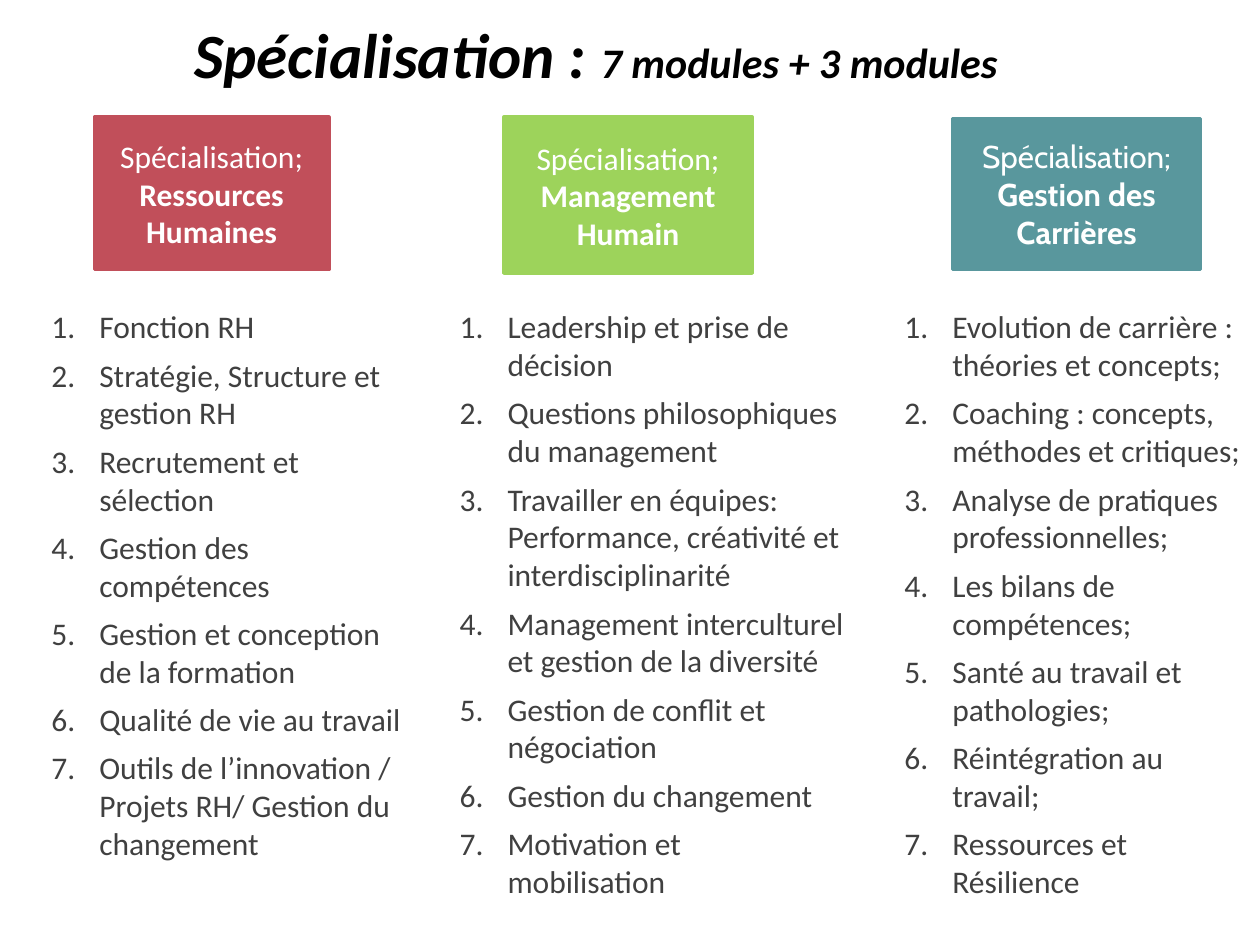
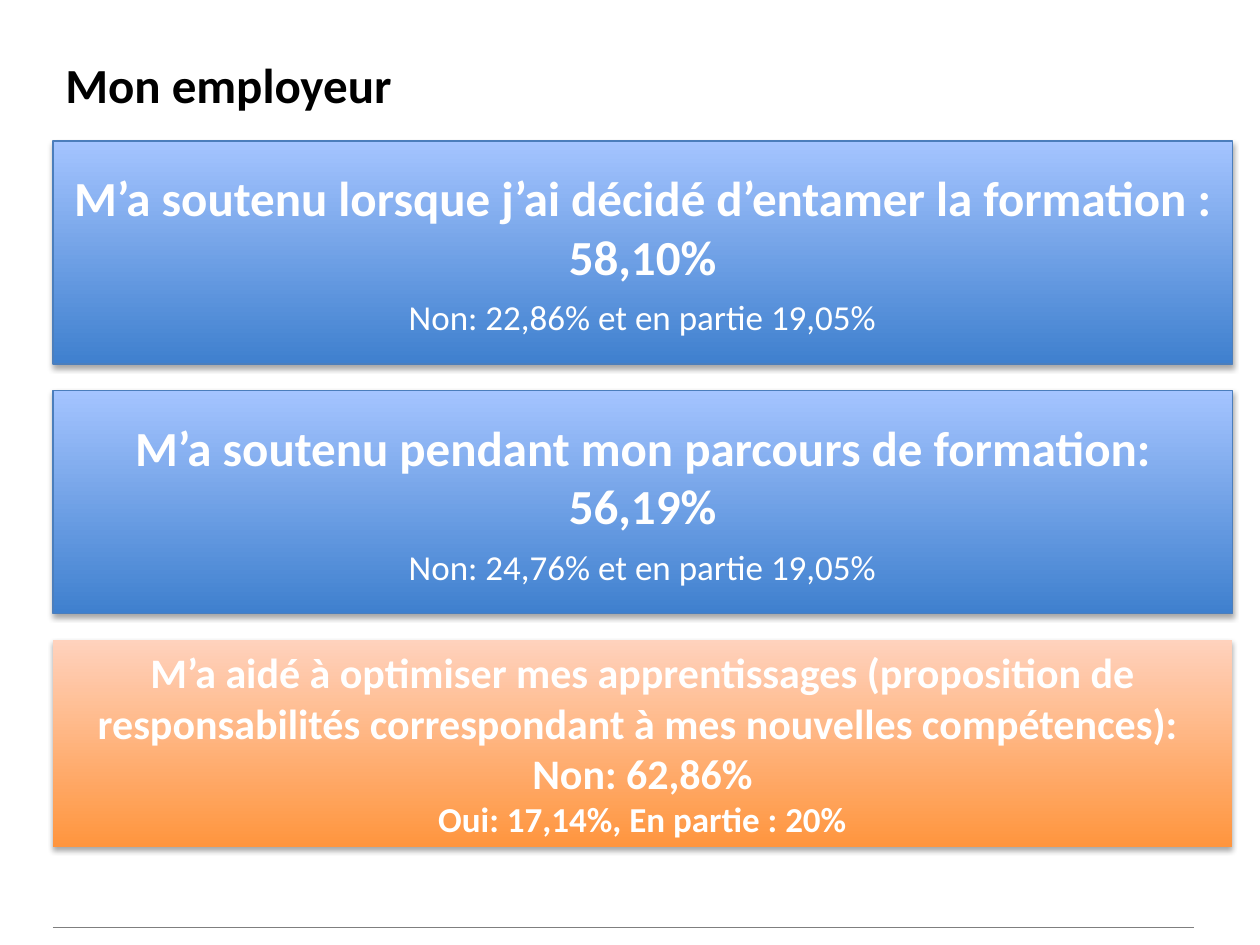
from lxml.etree import SubElement
from pptx import Presentation
from pptx.dml.color import RGBColor
from pptx.enum.shapes import MSO_CONNECTOR, MSO_SHAPE
from pptx.enum.text import MSO_ANCHOR, MSO_AUTO_SIZE, PP_ALIGN
from pptx.oxml.ns import qn
from pptx.util import Inches, Pt

WHITE, BLACK, GREY, RULE = "FFFFFF", "000000", "404040", "7F7F7F"
BLUE, BLUE_EDGE = ("3F80CE", "A4C4FF"), "4B7EBC"
ORANGE = ("FF953E", "FFD2BD")
CENTER = {"alignment": PP_ALIGN.CENTER}
CENTER_SPACED = CENTER | {"space_after": Pt(6)}

SPECIALISATIONS = [
    {
        "box": (0.75, 0.93, 1.86, 1.21), "color": "C14F5A", "font": "Calibri",
        "name": ["Ressources Humaines"],
        "list_box": (0.31, 2.39, 3.09, 4.54),
        "modules": [
            "Fonction RH",
            "Stratégie, Structure et gestion RH",
            "Recrutement et sélection",
            "Gestion des compétences",
            "Gestion et conception de la formation",
            "Qualité de vie au travail",
            "Outils de l’innovation / Projets RH/ Gestion du changement",
        ],
    },
    {
        "box": (4, 0.93, 1.97, 1.24), "color": "9DD35B", "font": "Calibri",
        "name": ["Management", "Humain"],
        "list_box": (3.55, 2.39, 3.26, 4.85),
        "modules": [
            "Leadership et prise de décision",
            "Questions philosophiques du management",
            "Travailler en équipes: Performance, créativité et interdisciplinarité",
            "Management interculturel et gestion de la diversité",
            "Gestion de conflit et négociation",
            "Gestion du changement",
            "Motivation et mobilisation",
        ],
    },
    {
        "box": (7.56, 0.94, 1.97, 1.2), "color": "59979D", "font": "Cabin",
        "name": ["Gestion des Carrières"],
        "list_box": (7.08, 2.39, 2.92, 4.85),
        "modules": [
            "Evolution de carrière : théories et concepts;",
            "Coaching : concepts, méthodes et critiques;",
            "Analyse de pratiques professionnelles;",
            "Les bilans de compétences;",
            "Santé au travail et pathologies;",
            "Réintégration au travail;",
            "Ressources et Résilience",
        ],
    },
]

SUPPORT_ANSWERS = [
    ("M’a soutenu lorsque j’ai décidé d’entamer la formation : 58,10%",
     "Non: 22,86% et en partie 19,05%"),
    ("M’a soutenu pendant mon parcours de formation: 56,19%",
     "Non: 24,76% et en partie 19,05%"),
]


def rgb(value):
    return RGBColor.from_string(value)


def set_format(target, values):
    for name, value in values.items():
        setattr(target, name, value)


class Deck:
    def __init__(self):
        self.presentation = Presentation()
        set_format(self.presentation,
                   {"slide_width": Inches(10), "slide_height": Inches(7.5)})
        self.slide = None

    def new_slide(self):
        self.slide = self.presentation.slides.add_slide(self.presentation.slide_layouts[6])

    def fill_paragraph(self, paragraph, runs, layout):
        set_format(paragraph, layout)
        for text, size, color, values in runs:
            run = paragraph.add_run()
            run.text = text
            set_format(run.font, {"name": "Calibri", "size": Pt(size)} | values)
            run.font.color.rgb = rgb(color)

    def fill_text(self, frame, paragraphs):
        for index, (runs, layout) in enumerate(paragraphs):
            paragraph = frame.add_paragraph() if index else frame.paragraphs[0]
            self.fill_paragraph(paragraph, runs, layout)

    def text(self, box, paragraphs, wrap=True, grow=False):
        shape = self.slide.shapes.add_textbox(*map(Inches, box))
        frame = shape.text_frame
        fit = MSO_AUTO_SIZE.SHAPE_TO_FIT_TEXT if grow else MSO_AUTO_SIZE.NONE
        set_format(frame, {"word_wrap": wrap, "auto_size": fit})
        self.fill_text(frame, paragraphs)
        return frame

    def numbered_list(self, box, items):
        layouts = [{"space_after": Pt(6)}] * (len(items) - 1) + [{}]
        paragraphs = [([(item, 18, GREY, {})], layout)
                      for item, layout in zip(items, layouts)]
        frame = self.text(box, paragraphs, grow=True)
        for paragraph in frame.paragraphs:
            properties = paragraph._p.get_or_add_pPr()
            properties.set("marL", str(Inches(0.38)))
            properties.set("indent", str(-Inches(0.38)))
            SubElement(properties, qn("a:buFont"), typeface="+mj-lt")
            SubElement(properties, qn("a:buAutoNum"), type="arabicPeriod")

    def box(self, box, paragraphs, line=None, line_width=0):
        shape = self.slide.shapes.add_shape(MSO_SHAPE.RECTANGLE, *map(Inches, box))
        shape.shadow.inherit = False
        if line:
            shape.line.color.rgb = rgb(line)
            shape.line.width = Pt(line_width)
        else:
            shape.line.fill.background()
        set_format(shape.text_frame,
                   {"word_wrap": True, "vertical_anchor": MSO_ANCHOR.MIDDLE})
        self.fill_text(shape.text_frame, paragraphs)
        return shape

    def solid_box(self, box, color, paragraphs):
        shape = self.box(box, paragraphs, color, 2)
        shape.fill.solid()
        shape.fill.fore_color.rgb = rgb(color)

    def gradient_box(self, box, colors, paragraphs, line=None):
        shape = self.box(box, paragraphs, line, 0.75)
        shape.fill.gradient()
        shape.fill.gradient_angle = 90
        for stop, position, color in zip(shape.fill.gradient_stops, (0, 1), colors):
            stop.position = position
            stop.color.rgb = rgb(color)
        effects = shape._element.spPr.find(qn("a:effectLst"))
        shadow = SubElement(effects, qn("a:outerShdw"), blurRad=str(Pt(3.1)),
                            dist=str(Pt(1.8)), dir="5400000", rotWithShape="0")
        shade = SubElement(shadow, qn("a:srgbClr"), val=BLACK)
        SubElement(shade, qn("a:alpha"), val="35000")

    def line(self, start, end, color, width):
        connector = self.slide.shapes.add_connector(
            MSO_CONNECTOR.STRAIGHT, *map(Inches, start + end))
        connector.line.color.rgb = rgb(color)
        connector.line.width = Pt(width)
        SubElement(connector._element.spPr, qn("a:effectLst"))


def build_specialisations(deck):
    deck.new_slide()
    for item in SPECIALISATIONS:
        font = {"name": item["font"]}
        heading = [([("Spécialisation;", 18, WHITE, font)], CENTER)]
        heading += [([(name, 18, WHITE, font | {"bold": True})], CENTER)
                    for name in item["name"]]
        deck.solid_box(item["box"], item["color"], heading)
        deck.numbered_list(item["list_box"], item["modules"])
    style = {"bold": True, "italic": True}
    title = [("Spécialisation : ", 36, BLACK, style),
             ("7 modules + 3 modules", 24, BLACK, style)]
    deck.text((0.38, 0.07, 8.7, 0.75), [(title, CENTER)])


def build_employer(deck):
    deck.new_slide()
    bold = {"bold": True}
    left, top, width, step = 0.42, 1.12, 9.36, 1.98
    deck.line((left, 7.36), (9.48, 7.36), RULE, 0.25)
    deck.text((left, 0.38, 2.82, 0.57),
              [([("Mon employeur", 28, BLACK, bold)], {})], wrap=False, grow=True)
    for index, (answer, detail) in enumerate(SUPPORT_ANSWERS):
        deck.gradient_box((left, top + index * step, width, 1.77), BLUE, [
            ([(answer, 28, WHITE, bold)], CENTER_SPACED),
            ([(detail, 20, WHITE, {})], CENTER),
        ], BLUE_EDGE)
    learning = [
        ("M’a aidé à optimiser mes apprentissages (proposition de responsabilités "
         "correspondant à mes nouvelles compétences): ", 24),
        ("Non: 62,86%", 24),
        ("Oui: 17,14%, En partie : 20%", 20),
    ]
    deck.gradient_box((left, top + 2 * step, width, 1.64), ORANGE,
                      [([(text, size, WHITE, bold)], CENTER) for text, size in learning])


def main():
    deck = Deck()
    build_specialisations(deck)
    build_employer(deck)
    deck.presentation.save("out.pptx")


if __name__ == "__main__":
    main()
